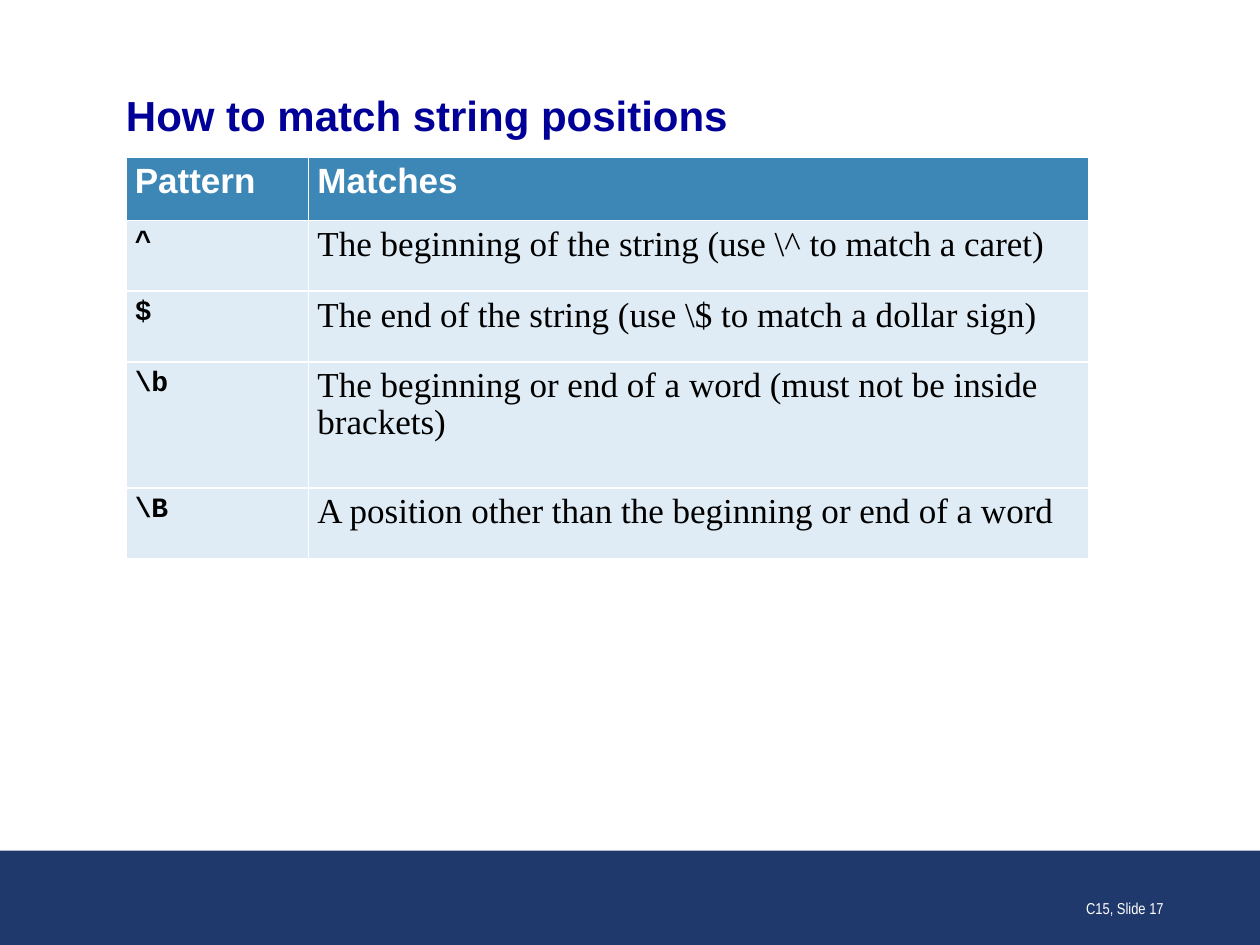
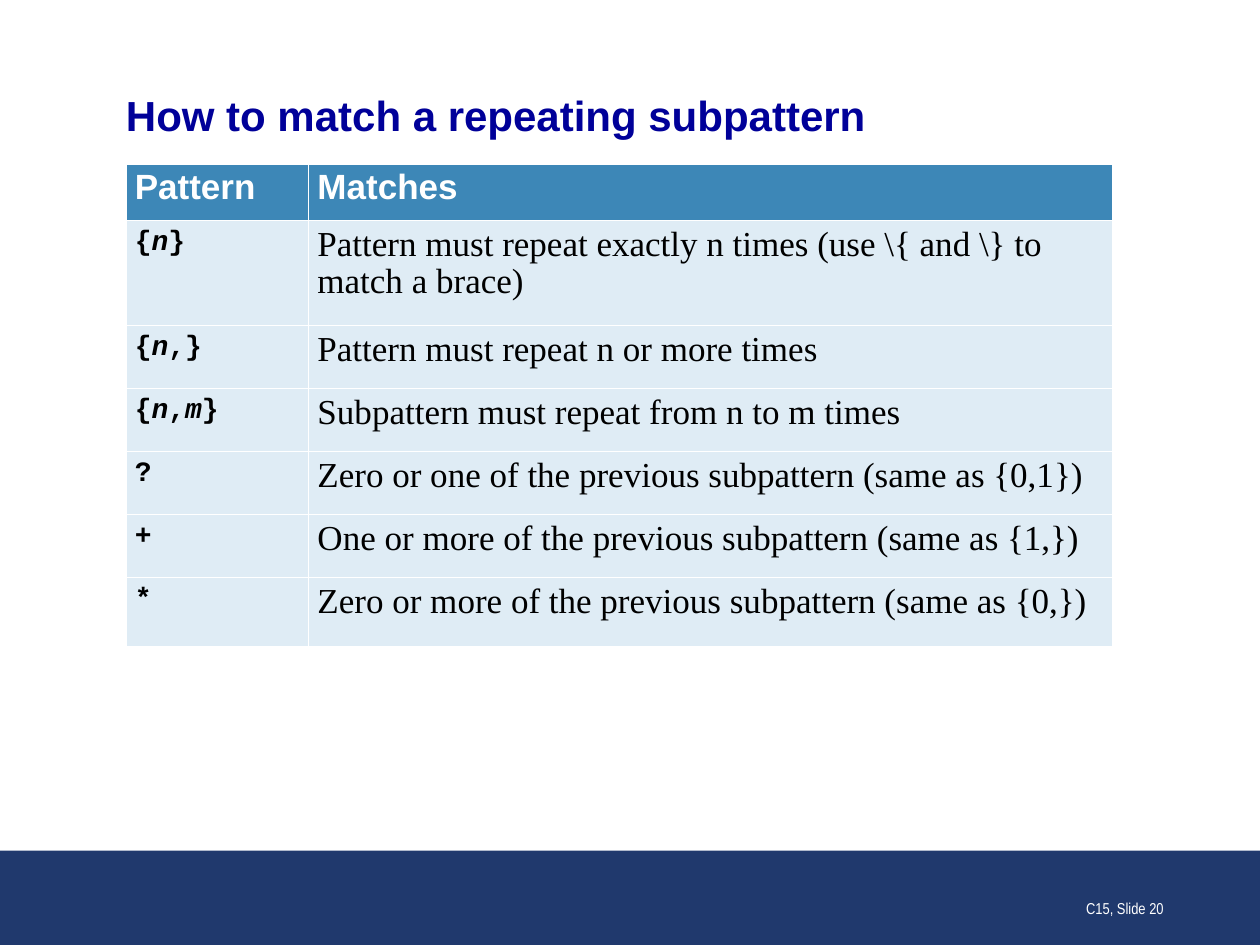
from dataclasses import dataclass
from itertools import cycle

from pptx import Presentation
from pptx.dml.color import RGBColor as Color
from pptx.enum.shapes import MSO_SHAPE as Shape
from pptx.enum.text import MSO_ANCHOR as Anchor, PP_ALIGN as Align
from pptx.util import Pt


@dataclass(frozen=True)
class Style:
    font: str
    size: float
    color: str
    bold: bool = False


@dataclass(frozen=True)
class Theme:
    band: str = "20396D"
    header_fill: str = "3D87B7"
    body_fill: str = "DFECF5"
    line_spacing: float = 0.95
    title: Style = Style("Arial", 24, "000099", True)
    header: Style = Style("Arial", 20, "FFFFFF", True)
    code: Style = Style("Courier New", 16, "000000", True)
    meaning: Style = Style("Times New Roman", 20, "000000")
    footer: Style = Style("Arial Narrow", 9, "FFFFFF")


THEME = Theme()
TITLE_BOX = (72, 51, 576, 28.8)
BAND_BOX = (0, 486, 720, 54)
PATTERN_WIDTH = 104.4
HEADINGS = ("Pattern", "Matches")

POSITIONS = [
    (("^",), "The beginning of the string (use \\^ to match a caret)"),
    (("$",), "The end of the string (use \\$ to match a dollar sign)"),
    (("\\b",), "The beginning or end of a word (must not be inside brackets)"),
    (("\\B",), "A position other than the beginning or end of a word"),
]
REPEATS = [
    (("{", "n", "}"), "Pattern must repeat exactly n times (use \\{ and \\} to match a brace)"),
    (("{", "n", ",}"), "Pattern must repeat n or more times"),
    (("{", "n", ",", "m", "}"), "Subpattern must repeat from n to m times"),
    (("?",), "Zero or one of the previous subpattern (same as {0,1})"),
    (("+",), "One or more of the previous subpattern (same as {1,})"),
    (("*",), "Zero or more of the previous subpattern (same as {0,})"),
]


def paint(target, color):
    target.fill.solid()
    target.fill.fore_color.rgb = Color.from_string(color)


def format_runs(paragraph, style):
    for run in paragraph.runs:
        run.font.name = style.font
        run.font.size = Pt(style.size)
        run.font.bold = style.bold
        run.font.color.rgb = Color.from_string(style.color)


def add_label(slide, box, text, style, anchor, align, inset):
    frame = slide.shapes.add_textbox(*map(Pt, box)).text_frame
    frame.word_wrap = True
    frame.vertical_anchor = anchor
    frame.margin_left = frame.margin_right = Pt(inset)
    frame.margin_top = frame.margin_bottom = Pt(inset / 2)
    frame.text = text
    frame.paragraphs[0].alignment = align
    format_runs(frame.paragraphs[0], style)


def add_footer_band(slide, box, number):
    left, top, width, height = box
    band = slide.shapes.add_shape(Shape.RECTANGLE, *map(Pt, box))
    band.shadow.inherit = False
    band.line.fill.background()
    paint(band, THEME.band)
    number_box = (left + width - 198, top + 6, 150, height - 18)
    add_label(slide, number_box, f"C15, Slide {number}", THEME.footer,
              Anchor.BOTTOM, Align.RIGHT, 7.2)


def fill_cell(cell, pieces, style, fill):
    paint(cell, fill)
    cell.margin_left = cell.margin_right = Pt(5.04)
    cell.margin_top = cell.margin_bottom = Pt(3.6)
    paragraph = cell.text_frame.paragraphs[0]
    paragraph.line_spacing = THEME.line_spacing
    for piece, italic in zip(pieces, cycle((False, True))):
        run = paragraph.add_run()
        run.text = piece
        run.font.italic = italic
    format_runs(paragraph, style)


def add_pattern_table(slide, box, row_heights, entries):
    table = slide.shapes.add_table(len(entries) + 1, 2, *map(Pt, box)).table
    table.horz_banding = False
    table.columns[0].width = Pt(PATTERN_WIDTH)
    table.columns[1].width = Pt(box[2] - PATTERN_WIDTH)
    for row, height in zip(table.rows, row_heights):
        row.height = Pt(height)
    for column, heading in enumerate(HEADINGS):
        fill_cell(table.cell(0, column), (heading,), THEME.header, THEME.header_fill)
    for row, (pattern, meaning) in enumerate(entries, 1):
        fill_cell(table.cell(row, 0), pattern, THEME.code, THEME.body_fill)
        fill_cell(table.cell(row, 1), (meaning,), THEME.meaning, THEME.body_fill)


def add_pattern_slide(deck, number, title, table_top, table_width, row_heights, entries):
    slide = deck.slides.add_slide(deck.slide_layouts[6])
    add_footer_band(slide, BAND_BOX, number)
    add_label(slide, TITLE_BOX, title, THEME.title, Anchor.MIDDLE, Align.LEFT, 0)
    table_box = (TITLE_BOX[0], table_top, table_width, sum(row_heights))
    add_pattern_table(slide, table_box, row_heights, entries)


def main():
    deck = Presentation()
    deck.slide_width, deck.slide_height = Pt(720), Pt(540)
    add_pattern_slide(deck, 17, "How to match string positions", 90, 550,
                      [36, 40.4, 40.4, 72, 40.4], POSITIONS)
    add_pattern_slide(deck, 20, "How to match a repeating subpattern", 93.6, 563.8,
                      [32.4, 60] + [36] * 4 + [39.6], REPEATS)
    deck.save("out.pptx")


if __name__ == "__main__":
    main()
